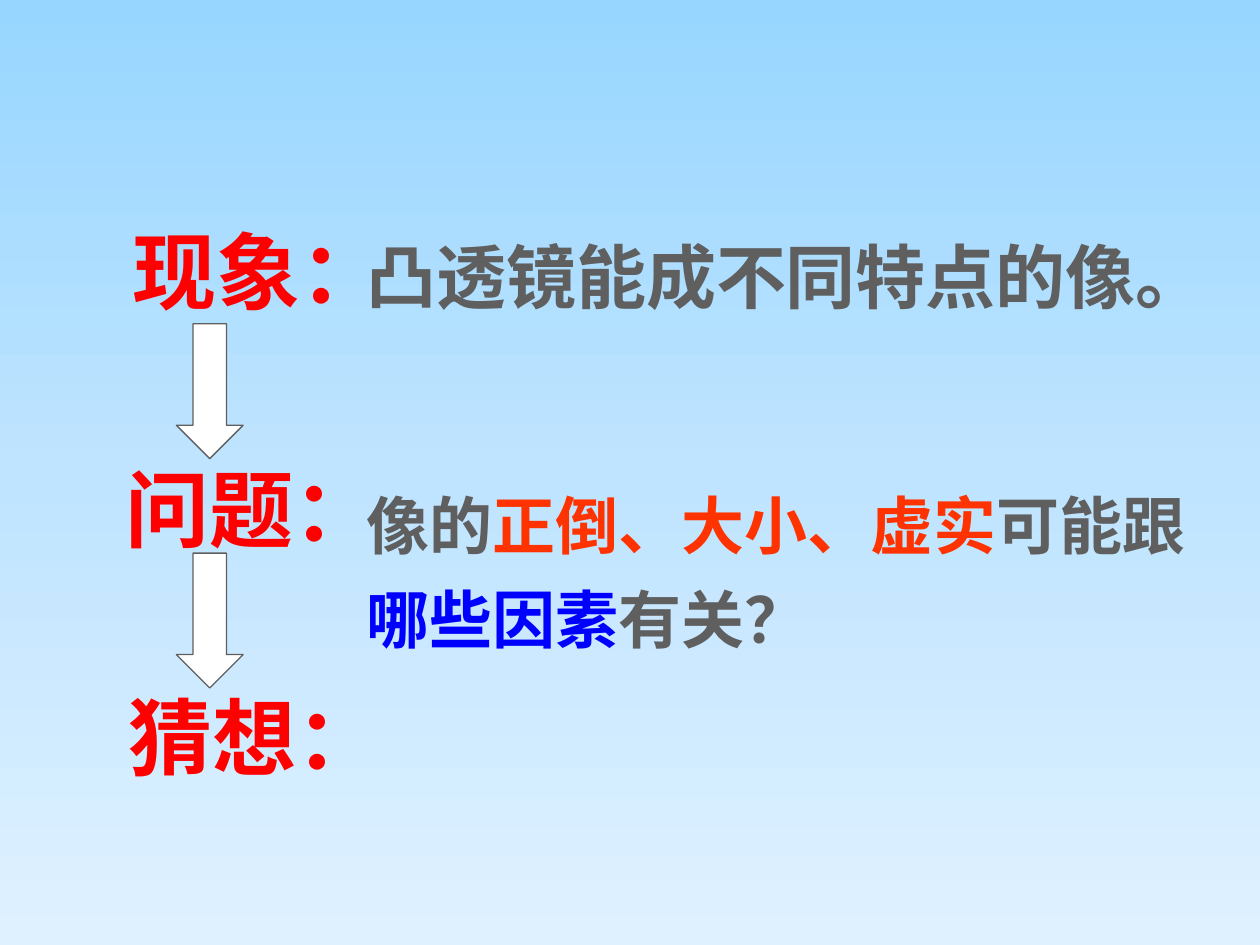
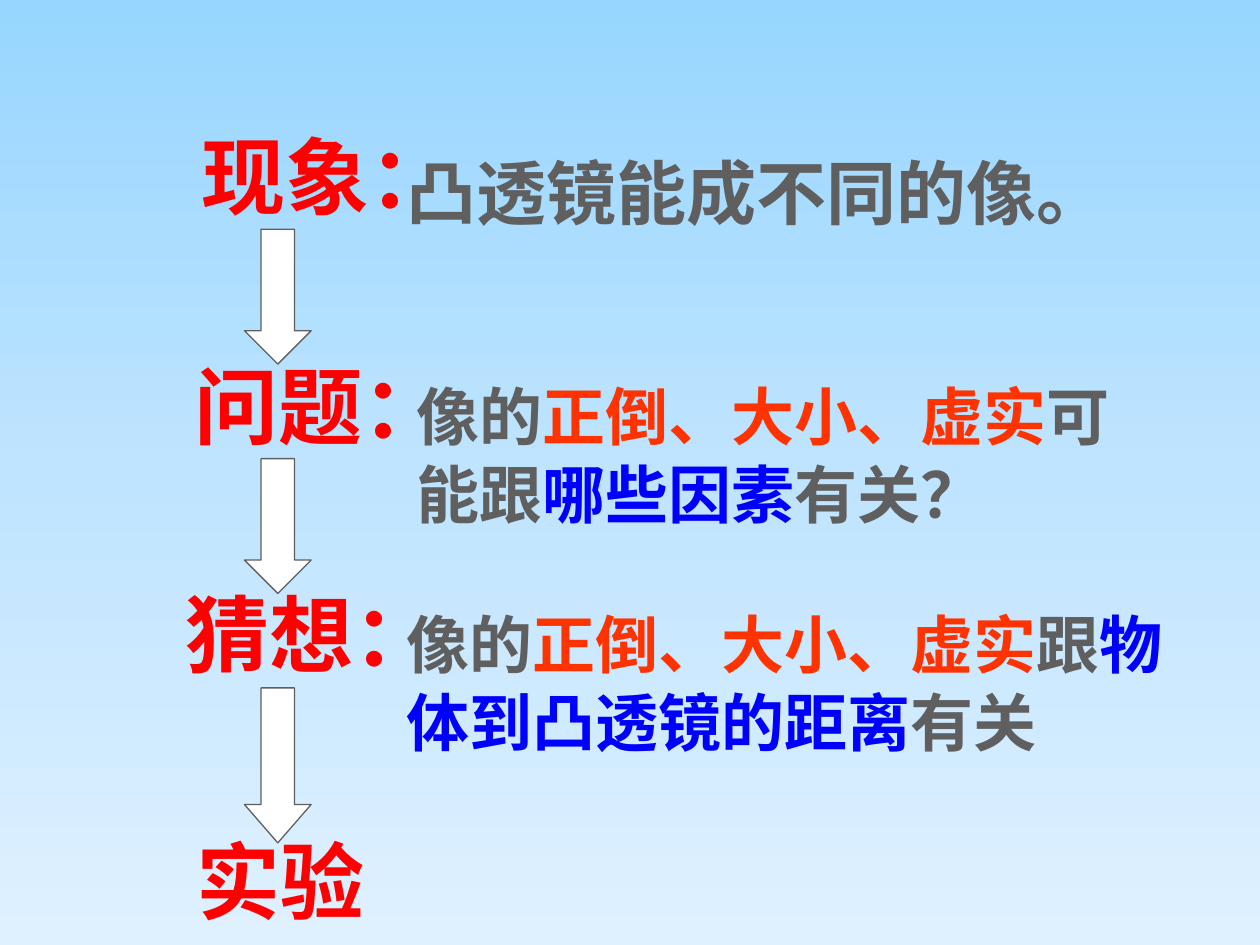
from copy import deepcopy

from lxml import etree
from pptx import Presentation
from pptx.dml.color import RGBColor
from pptx.enum.shapes import MSO_SHAPE
from pptx.enum.text import MSO_ANCHOR, PP_ALIGN
from pptx.oxml.ns import qn
from pptx.util import Inches, Pt

SKY_TOP = RGBColor(0x97, 0xD6, 0xFF)
SKY_MIDDLE = RGBColor(0xBF, 0xE4, 0xFF)
SKY_BOTTOM = RGBColor(0xDF, 0xF1, 0xFF)
RED = RGBColor(0xFF, 0x00, 0x00)
ORANGE = RGBColor(0xFF, 0x33, 0x00)
BLUE = RGBColor(0x00, 0x00, 0xFF)
GREY = RGBColor(0x5F, 0x5F, 0x5F)
WHITE = RGBColor(0xFF, 0xFF, 0xFF)

LATIN = "Arial"
CJK = "Noto Sans CJK SC"
DOWN_ARROW = MSO_SHAPE.DOWN_ARROW
TOP, MIDDLE = MSO_ANCHOR.TOP, MSO_ANCHOR.MIDDLE
LEFT, CENTER, RIGHT = PP_ALIGN.LEFT, PP_ALIGN.CENTER, PP_ALIGN.RIGHT

ARROW_WIDTH = 0.53
ARROW_HEIGHT = 1.07
STEP_PITCH = 1.82
LINE_SPACING = 1.04

IMAGE_TRAITS = [("像的", GREY), ("正倒、大小、虚实", ORANGE)]
QUESTION = IMAGE_TRAITS + [("可能跟", GREY), ("哪些因素", BLUE), ("有关？", GREY)]
GUESS = IMAGE_TRAITS + [("跟", GREY), ("物体到凸透镜的距离", BLUE), ("有关", GREY)]


def add_sky_slide(prs):
    slide = prs.slides.add_slide(prs.slide_layouts[6])
    fill = slide.background.fill
    fill.gradient()
    fill.gradient_angle = 270
    first_stop = next(slide.element.iter(qn("a:gs")))
    first_stop.addnext(deepcopy(first_stop))
    colours = (SKY_TOP, SKY_MIDDLE, SKY_BOTTOM)
    for stop, position, colour in zip(fill.gradient_stops, (0, 0.5, 1), colours):
        stop.position = position
        stop.color.rgb = colour
    return slide


def add_text(slide, box, parts, size, font_name, align=LEFT, anchor=TOP,
             spacing=LINE_SPACING):
    """Write one bold paragraph from (words, colour) parts."""
    text_box = slide.shapes.add_textbox(*map(Inches, box))
    frame = text_box.text_frame
    frame.word_wrap = True
    frame.vertical_anchor = anchor
    paragraph = frame.paragraphs[0]
    paragraph.alignment = align
    paragraph.line_spacing = spacing
    paragraph.font.size = Pt(size)
    paragraph.font.bold = True
    paragraph.font.name = font_name
    for words, colour in parts:
        run = paragraph.add_run()
        run.text = words
        run.font.color.rgb = colour
    for latin in list(text_box.element.iter(qn("a:latin"))):
        latin.addnext(etree.Element(qn("a:ea"), typeface=LATIN))


def add_step(slide, box, label, align=CENTER, font_name=LATIN):
    add_text(slide, box, [(label, RED)], 48, font_name, align, MIDDLE)


def add_finding(slide, box, words):
    add_text(slide, box, [(words, GREY)], 40, CJK)


def add_arrow(slide, left, top, height=ARROW_HEIGHT):
    arrow = slide.shapes.add_shape(
        DOWN_ARROW, *map(Inches, (left, top, ARROW_WIDTH, height)))
    arrow.shadow.inherit = False
    arrow.adjustments[1] = 0.5 * height / ARROW_HEIGHT
    arrow.fill.solid()
    arrow.fill.fore_color.rgb = WHITE
    arrow.line.color.rgb = GREY
    arrow.line.width = Pt(0.75)


def build_question_slide(prs):
    slide = add_sky_slide(prs)
    add_step(slide, (0.29, 1.54, 2.86, 1.17), "现象：", RIGHT, CJK)
    add_step(slide, (0.29, 3.43, 3.41, 1.17), "问题：")
    add_step(slide, (0.92, 5.24, 2.3, 1.17), "猜想：", LEFT)
    for step in range(2):
        add_arrow(slide, 1.4, 2.57 + step * STEP_PITCH)
    add_finding(slide, (2.81, 1.78, 6.93, 0.87), "凸透镜能成不同特点的像。")
    add_text(slide, (2.81, 3.67, 7.01, 1.54), QUESTION, 36, LATIN,
             spacing=1.2 * LINE_SPACING)


def build_guess_slide(prs):
    slide = add_sky_slide(prs)
    add_step(slide, (0.84, 0.79, 2.86, 1.17), "现象：", RIGHT, CJK)
    add_step(slide, (0.84, 2.61, 3.41, 1.17), "问题：")
    add_step(slide, (1, 4.42, 2.94, 1.17), "猜想：")
    add_step(slide, (0.52, 6.46, 3.42, 1.01), "实验")
    for step, height in enumerate((ARROW_HEIGHT, ARROW_HEIGHT, 1.23)):
        add_arrow(slide, 1.94, 1.82 + step * STEP_PITCH, height)
    add_finding(slide, (3.13, 1.11, 5.9, 0.87), "凸透镜能成不同的像。")
    add_text(slide, (3.21, 2.92, 5.98, 1.3), QUESTION, 36, LATIN)
    add_text(slide, (3.13, 4.73, 6.61, 1.34), GUESS, 36, CJK)


def main():
    prs = Presentation()
    prs.slide_width = Inches(10)
    prs.slide_height = Inches(7.5)
    build_question_slide(prs)
    build_guess_slide(prs)
    prs.save("out.pptx")


if __name__ == "__main__":
    main()
